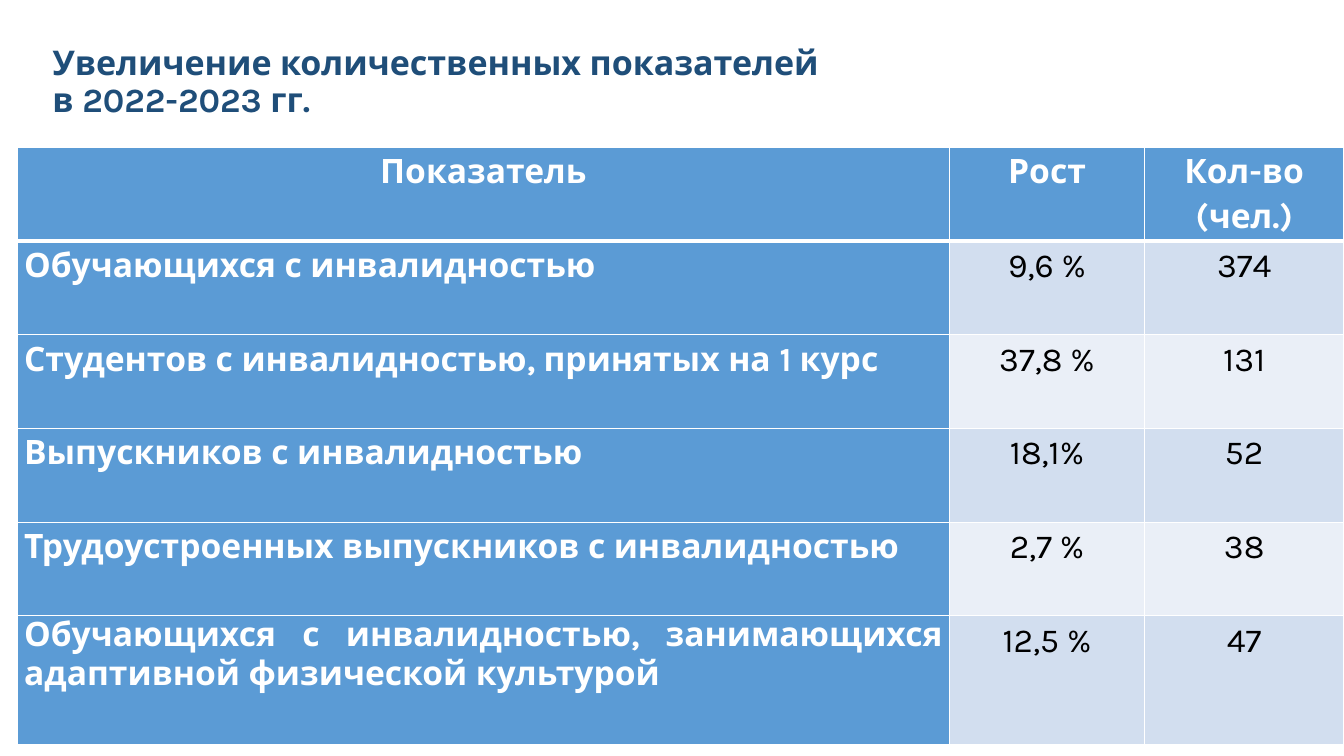
from pptx import Presentation
from pptx.dml.color import RGBColor as RGB
from pptx.enum.text import MSO_ANCHOR as ANCHOR, MSO_AUTO_SIZE as FIT, PP_ALIGN as AL
from pptx.oxml import parse_xml
from pptx.oxml.ns import nsdecls
from pptx.util import Inches, Pt

# Content
TITLE = "Увеличение количественных показателей\vв 2022-2023 гг."
ROWS = [
    ("Показатель", "Рост", "Кол-во\n(чел.)"),
    ("Обучающихся с инвалидностью", "9,6 %", "374"),
    ("Студентов с инвалидностью, принятых на 1 курс", "37,8 %", "131"),
    ("Выпускников с инвалидностью", "18,1%", "52"),
    ("Трудоустроенных выпускников с инвалидностью", "2,7 %", "38"),
    ("Обучающихся с инвалидностью, занимающихся адаптивной физической культурой",
     "12,5 %", "47"),
]

# Theme and grid (inches)
THEME = dict(font="Karla", title="1F4E79", head="5B9BD5", bands=("EAEFF7", "D2DEEF"),
             light="FFFFFF", dark="000000", title_size=24.3, cell_size=24)
W, H = 13.33, 7.5
TITLE_BOX = dict(left=0.42, top=0.18, width=8.3, height=1.29)
LEFT, TOP = 0.17, 1.46
COLS = (9.25, 1.93, 1.98)
HEIGHTS = [0.93] * (len(ROWS) - 1) + [1.28]
MARGINS = dict(margin_left=0.07, margin_right=0.07, margin_top=0, margin_bottom=0)


def style(p, size, color, bold, align, spacing):
    for name, value in dict(alignment=align, line_spacing=spacing).items():
        setattr(p, name, value)
    for name, value in dict(name=THEME["font"], size=Pt(size), bold=bold).items():
        setattr(p.font, name, value)
    p.font.color.rgb = RGB.from_string(color)


def add_borders(cell, row):
    widths = dict(lnL=1, lnR=1, lnT=3 if row == 1 else 1, lnB=3 if row == 0 else 1)
    for tag, width in widths.items():
        cell._tc.get_or_add_tcPr().append(parse_xml(
            f'<a:{tag} {nsdecls("a")} w="{Pt(width)}"><a:solidFill>'
            f'<a:srgbClr val="{THEME["light"]}"/></a:solidFill></a:{tag}>'))


def fill_cell(cell, text, row, col):
    heading = row == 0 or col == 0
    add_borders(cell, row)
    cell.fill.solid()
    cell.fill.fore_color.rgb = RGB.from_string(
        THEME["head"] if heading else THEME["bands"][row % 2])
    for name, value in MARGINS.items():
        setattr(cell, name, Inches(value))
    cell.text_frame.text = text
    # The long last label is set tighter than the other cells
    spacing = 1.0 if col == 0 and row == len(ROWS) - 1 else 1.15
    for p in cell.text_frame.paragraphs:
        style(p, THEME["cell_size"], THEME["light" if heading else "dark"], heading,
              AL.JUSTIFY if col == 0 and row else AL.CENTER, spacing)


def main():
    prs = Presentation()
    prs.slide_width, prs.slide_height = Inches(W), Inches(H)
    s = prs.slides.add_slide(prs.slide_layouts[5])

    # Title
    title = s.shapes.title
    for name, value in TITLE_BOX.items():
        setattr(title, name, Inches(value))
    tf = title.text_frame
    tf.text = TITLE
    for name, value in dict(word_wrap=True, auto_size=FIT.NONE,
                            vertical_anchor=ANCHOR.MIDDLE).items():
        setattr(tf, name, value)
    style(tf.paragraphs[0], THEME["title_size"], THEME["title"], True, AL.LEFT, 0.9)

    # Table
    table = s.shapes.add_table(len(ROWS), len(COLS), Inches(LEFT), Inches(TOP),
                               Inches(sum(COLS)), Inches(sum(HEIGHTS))).table
    table.first_col = True
    for column, width in zip(table.columns, COLS):
        column.width = Inches(width)
    for i, (line, height) in enumerate(zip(ROWS, HEIGHTS)):
        table.rows[i].height = Inches(height)
        for j, text in enumerate(line):
            fill_cell(table.cell(i, j), text, i, j)

    prs.save("out.pptx")


if __name__ == "__main__":
    main()
